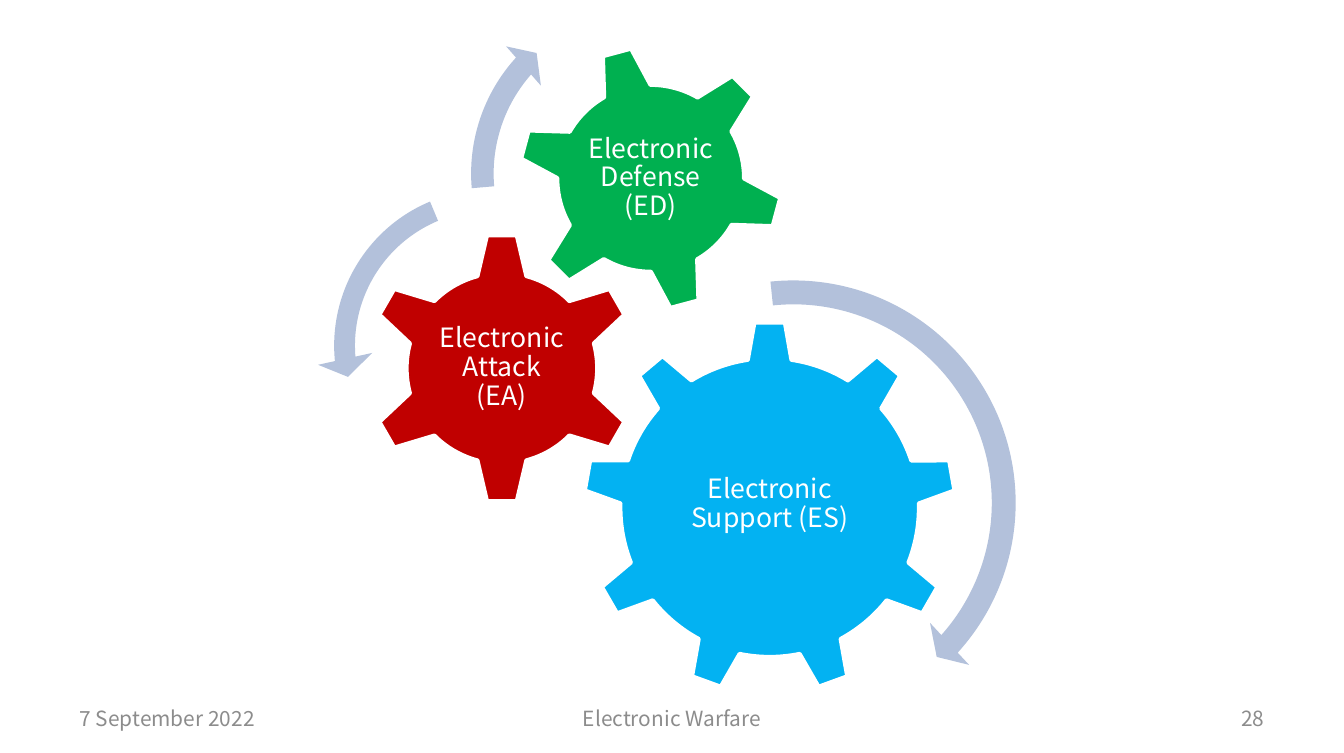
import pptx
import pptx.util
import pptx.dml.color
import pptx.enum.shapes
import pptx.enum.text

MSO = pptx.enum.shapes.MSO_SHAPE
ALIGN = pptx.enum.text.PP_ALIGN
FONT = "Noto Sans CJK SC"
WIDTH, HEIGHT = 9.84, 5.51
UNIT = WIDTH / 100
ARROW_COLOR = "B3C1DB"

FOOTERS = [
    ("7 September 2022", 5, 23.37, ALIGN.LEFT),
    ("Electronic Warfare", 34.15, 31.7, ALIGN.CENTER),
    ("28", 71.63, 23.37, ALIGN.RIGHT),
]
FOOTER_TOP, FOOTER_HEIGHT = 51.93, 2.95

GEARS = [
    dict(text="Electronic Support (ES)", kind=MSO.GEAR_9, color="03B2F2", turn=0,
         center=(57.27, 37.75), size=27.74, label=(16.57, 14.23), lift=0.25),
    dict(text="Electronic Attack (EA)", kind=MSO.GEAR_6, color="C00000", turn=0,
         center=(37.35, 27.39), size=20.22, label=(10.06, 9.96), lift=0.05),
    dict(text="Electronic Defense (ED)", kind=MSO.GEAR_6, color="00B050", turn=345,
         center=(48.42, 13.26), size=19.82, label=(11.08, 11.08), lift=0),
]

ARROWS = [
    (MSO.CIRCULAR_ARROW, (59.04, 37.4), 35.57, (0.05, 2.99, 25.24, 158.45, 0.06)),
    (MSO.LEFT_CIRCULAR_ARROW, (36.48, 25.71), 25.81, (0.06, 4.3, 104.89, 148.38, 0.08)),
    (MSO.CIRCULAR_ARROW, (47.87, 12.91), 27.85, (0.06, 3.94, 133.14, 105.08, 0.07)),
]


def rgb(value):
    return pptx.dml.color.RGBColor.from_string(value)


def units(*values):
    return [pptx.util.Inches(v * UNIT) for v in values]


def centered(center, w, h):
    return center[0] - w / 2, center[1] - h / 2, w, h


def add_text(s, text, box, size, color, align, inset, spacing=None, after=None):
    tf = s.shapes.add_textbox(*units(*box)).text_frame
    tf.word_wrap = True
    tf.vertical_anchor = pptx.enum.text.MSO_ANCHOR.MIDDLE
    tf.margin_left = tf.margin_right = pptx.util.Inches(inset[0])
    tf.margin_top = tf.margin_bottom = pptx.util.Inches(inset[1])
    p = tf.paragraphs[0]
    p.alignment = align
    if spacing:
        p.line_spacing = spacing
    if after:
        p.space_after = pptx.util.Pt(after)
    r = p.add_run()
    r.text = text
    r.font.name = FONT
    r.font.size = pptx.util.Pt(size)
    r.font.color.rgb = rgb(color)


def add_round(s, kind, center, size, color, line=None):
    sp = s.shapes.add_shape(kind, *units(*centered(center, size, size)))
    sp.shadow.inherit = False
    sp.fill.solid()
    sp.fill.fore_color.rgb = rgb(color)
    if line:
        sp.line.color.rgb = rgb(line)
        sp.line.width = pptx.util.Pt(2)
    else:
        sp.line.fill.background()
    return sp


prs = pptx.Presentation()
prs.slide_width = pptx.util.Inches(WIDTH)
prs.slide_height = pptx.util.Inches(HEIGHT)
s = prs.slides.add_slide(prs.slide_layouts[6])

for text, left, width, align in FOOTERS:
    add_text(s, text, (left, FOOTER_TOP, width, FOOTER_HEIGHT), 11, "8C8C8C",
             align, (0.09, 0.04))

for gear in GEARS:
    sp = add_round(s, gear["kind"], gear["center"], gear["size"], gear["color"], "FFFFFF")
    sp.rotation = gear["turn"]
    x, y = gear["center"]
    add_text(s, gear["text"], centered((x, y - gear["lift"]), *gear["label"]), 14,
             "FFFFFF", ALIGN.CENTER, (0.02, 0.02), spacing=0.9, after=5)

for kind, center, size, adjustments in ARROWS:
    sp = add_round(s, kind, center, size, ARROW_COLOR)
    for i, value in enumerate(adjustments):
        sp.adjustments[i] = value

prs.save("out.pptx")
